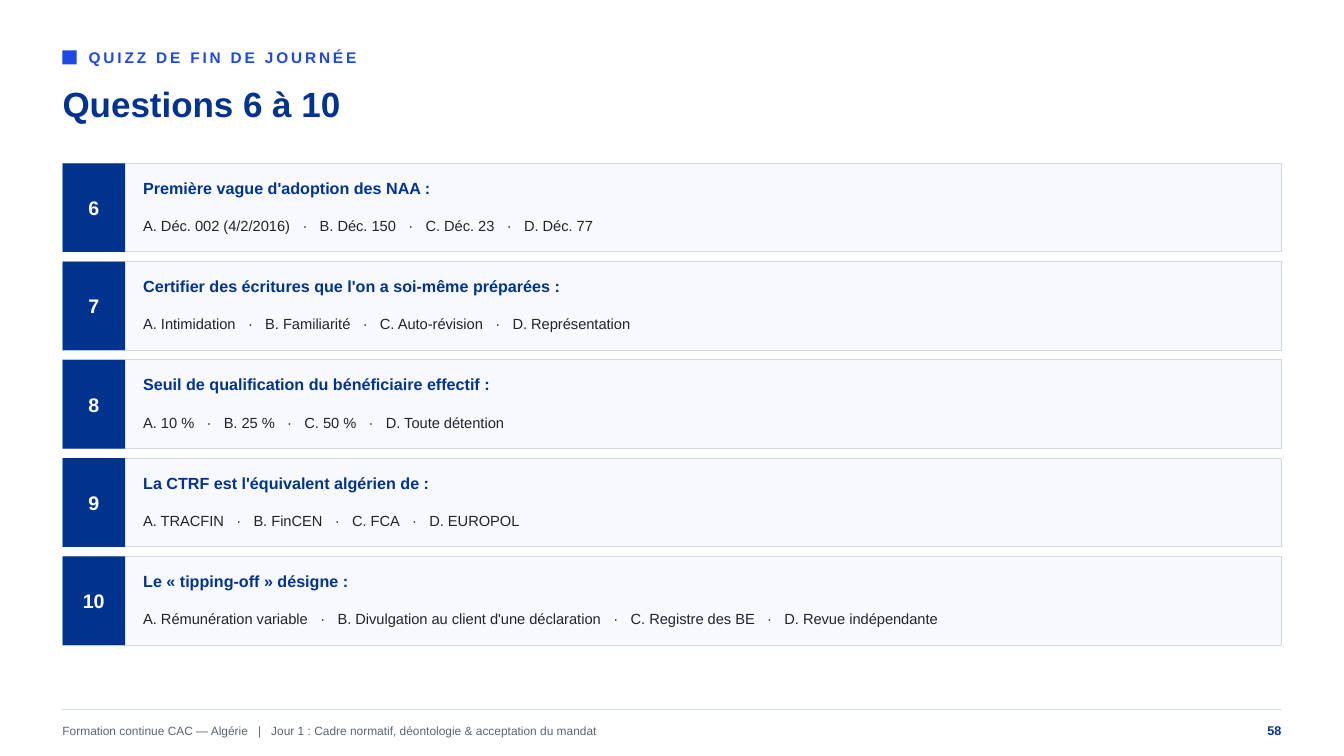
from dataclasses import dataclass

from lxml import etree
from pptx import Presentation
from pptx.dml.color import RGBColor
from pptx.enum.shapes import MSO_CONNECTOR, MSO_SHAPE
from pptx.enum.text import MSO_ANCHOR, MSO_AUTO_SIZE, PP_ALIGN
from pptx.oxml.ns import qn
from pptx.util import Inches, Pt

RECT = MSO_SHAPE.RECTANGLE
STRAIGHT = MSO_CONNECTOR.STRAIGHT
MIDDLE = MSO_ANCHOR.MIDDLE
NO_FIT = MSO_AUTO_SIZE.NONE
LEFT, CENTER, RIGHT = PP_ALIGN.LEFT, PP_ALIGN.CENTER, PP_ALIGN.RIGHT

FONT = "Arial"
NAVY, BLUE, WHITE = "00338D", "1E49E2", "FFFFFF"
INK, GREY, PALE, BORDER = "20242E", "5A6473", "F7F9FC", "D2D9E6"

MARGIN, WIDTH = 0.62, 12.09
FIRST_TOP, LAST_TOP, CARD_H, BADGE_W = 1.62, 5.52, 0.88, 0.62
TEXT_X, TEXT_W = 1.42, 11.09
SPACE_WIDTH = 0.28


@dataclass
class Question:
    number: int
    prompt: str
    answers: list[str]


@dataclass
class Style:
    size: float
    color: str
    bold: bool = False
    align: PP_ALIGN = LEFT
    spacing: float = 0


QUESTIONS = [
    Question(6, "Première vague d'adoption des NAA :",
             ["A. Déc. 002 (4/2/2016)", "B. Déc. 150", "C. Déc. 23", "D. Déc. 77"]),
    Question(7, "Certifier des écritures que l'on a soi-même préparées :",
             ["A. Intimidation", "B. Familiarité", "C. Auto-révision", "D. Représentation"]),
    Question(8, "Seuil de qualification du bénéficiaire effectif :",
             ["A. 10 %", "B. 25 %", "C. 50 %", "D. Toute détention"]),
    Question(9, "La CTRF est l'équivalent algérien de :",
             ["A. TRACFIN", "B. FinCEN", "C. FCA", "D. EUROPOL"]),
    Question(10, "Le « tipping-off » désigne :",
             ["A. Rémunération variable", "B. Divulgation au client d'une déclaration",
              "C. Registre des BE", "D. Revue indépendante"]),
]

KICKER = Style(11, BLUE, True, spacing=2)
TITLE = Style(25, NAVY, True)
NUMBER = Style(14, WHITE, True, CENTER)
PROMPT = Style(11.5, NAVY, True)
ANSWERS = Style(10.5, INK)
FOOTER = Style(8.5, GREY)
PAGE = Style(9, NAVY, True, RIGHT)


def rgb(color: str) -> RGBColor:
    return RGBColor.from_string(color)


def set_spacing(r, points: float) -> None:
    r._r.get_or_add_rPr().set("spc", str(round(points * 100)))


def format_text(shape, style: Style) -> None:
    tf = shape.text_frame
    tf.word_wrap = True
    tf.auto_size = NO_FIT
    tf.vertical_anchor = MIDDLE
    tf.margin_left = tf.margin_top = tf.margin_right = tf.margin_bottom = 0
    p = tf.paragraphs[0]
    p.alignment = style.align
    for r in p.runs:
        r.font.name = FONT
        r.font.size = Pt(style.size)
        r.font.bold = style.bold
        r.font.color.rgb = rgb(style.color)
        if style.spacing:
            set_spacing(r, style.spacing)


def add_text(s, x: float, y: float, w: float, h: float, text: str, style: Style):
    box = s.shapes.add_textbox(Inches(x), Inches(y), Inches(w), Inches(h))
    box.text_frame.text = text
    format_text(box, style)
    return box


def add_separated(s, x: float, y: float, w: float, h: float,
                  parts: list[str], mark: str, style: Style) -> None:
    box = add_text(s, x, y, w, h, parts[0], style)
    p = box.text_frame.paragraphs[0]
    for part in parts[1:]:
        separator = p.add_run()
        separator.text = f" {mark}"
        set_spacing(separator, 2 * SPACE_WIDTH * style.size)
        p.add_run().text = f" {part}"
    format_text(box, style)


def add_rect(s, x: float, y: float, w: float, h: float, fill: str, line: str = ""):
    shape = s.shapes.add_shape(RECT, Inches(x), Inches(y), Inches(w), Inches(h))
    shape.shadow.inherit = False
    shape.fill.solid()
    shape.fill.fore_color.rgb = rgb(fill)
    if line:
        shape.line.color.rgb = rgb(line)
        shape.line.width = Pt(0.75)
    else:
        shape.line.fill.background()
    return shape


def add_rule(s, x: float, y: float, w: float) -> None:
    rule = s.shapes.add_connector(STRAIGHT, Inches(x), Inches(y), Inches(x + w), Inches(y))
    rule.line.color.rgb = rgb(BORDER)
    rule.line.width = Pt(1)
    etree.SubElement(rule._element.spPr, qn("a:effectLst"))


def add_question(s, y: float, question: Question) -> None:
    add_rect(s, MARGIN, y, WIDTH, CARD_H, PALE, BORDER)
    badge = add_rect(s, MARGIN, y, BADGE_W, CARD_H, NAVY)
    badge.text_frame.text = str(question.number)
    format_text(badge, NUMBER)
    add_text(s, TEXT_X, y + 0.06, TEXT_W, 0.37, question.prompt, PROMPT)
    add_separated(s, TEXT_X, y + 0.4, TEXT_W, 0.44, question.answers, "·", ANSWERS)


def main() -> None:
    prs = Presentation()
    prs.slide_width, prs.slide_height = Inches(13.33), Inches(7.5)
    s = prs.slides.add_slide(prs.slide_layouts[5])
    s.background.fill.solid()
    s.background.fill.fore_color.rgb = rgb(WHITE)

    title = s.shapes.title
    title.left, title.top = Inches(MARGIN), Inches(0.72)
    title.width, title.height = Inches(12.1), Inches(0.62)
    title.text_frame.text = "Questions 6 à 10"
    format_text(title, TITLE)

    add_rect(s, MARGIN, 0.5, 0.14, 0.14, BLUE)
    add_text(s, 0.88, 0.43, 12, 0.28, "QUIZZ DE FIN DE JOURNÉE", KICKER)

    pitch = (LAST_TOP - FIRST_TOP) / (len(QUESTIONS) - 1)
    for i, question in enumerate(QUESTIONS):
        add_question(s, FIRST_TOP + i * pitch, question)

    add_rule(s, MARGIN, 7.04, WIDTH)
    add_separated(s, MARGIN, 7.1, 10.5, 0.3,
                  ["Formation continue CAC — Algérie",
                   "Jour 1 : Cadre normatif, déontologie & acceptation du mandat"], "|", FOOTER)
    add_text(s, MARGIN + WIDTH - 1, 7.1, 1, 0.3, "58", PAGE)
    prs.save("out.pptx")


if __name__ == "__main__":
    main()
